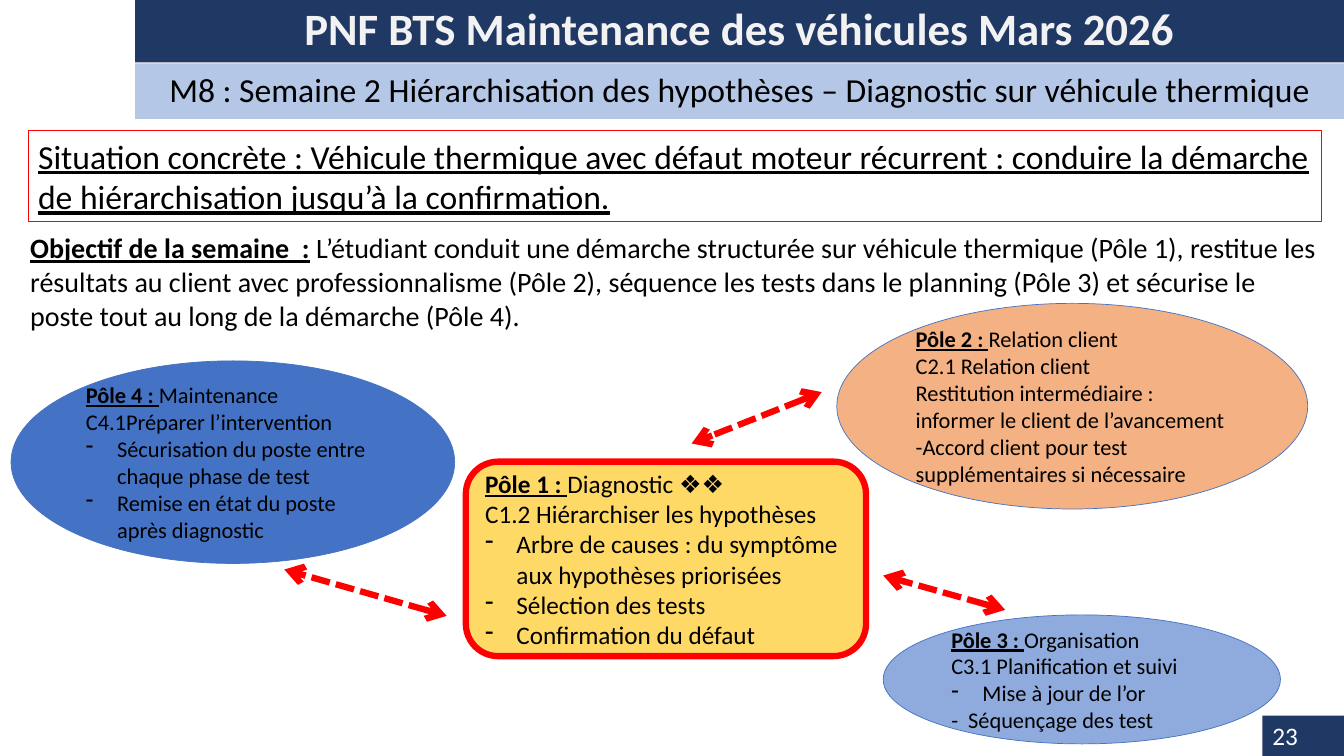
from dataclasses import dataclass

from lxml.etree import SubElement
from pptx import Presentation
from pptx.dml.color import RGBColor
from pptx.enum.dml import MSO_LINE
from pptx.enum.shapes import MSO_CONNECTOR, MSO_SHAPE
from pptx.enum.text import MSO_ANCHOR, MSO_AUTO_SIZE, PP_ALIGN
from pptx.oxml.ns import qn
from pptx.util import Inches, Pt


@dataclass(frozen=True)
class Theme:
    font: str = "Calibri"
    navy: str = "203864"
    pale_blue: str = "B4C7E7"
    soft_blue: str = "8FAADC"
    blue: str = "4472C4"
    orange: str = "F4B183"
    yellow: str = "FFD966"
    red: str = "FF0000"
    black: str = "000000"
    white: str = "FFFFFF"
    off_white: str = "F2F2F2"
    title: int = 32
    subtitle: int = 24
    body: int = 20
    label: int = 18
    small: int = 16
    heavy_line: float = 4.5
    fine_line: float = 0.75
    hairline: float = 0.5


THEME = Theme()


def color(code):
    return RGBColor.from_string(code)


def add_panel(page, kind, box, fill=None, line=None, width=0):
    panel = page.shapes.add_shape(kind, *map(Inches, box))
    panel.shadow.inherit = False
    if fill:
        panel.fill.solid()
        panel.fill.fore_color.rgb = color(fill)
    else:
        panel.fill.background()
    if line:
        panel.line.color.rgb = color(line)
        panel.line.width = Pt(width)
    else:
        panel.line.fill.background()
    return panel


def add_dash(para):
    properties = para._p.get_or_add_pPr()
    properties.set("marL", str(Inches(0.31)))
    properties.set("indent", str(-Inches(0.31)))
    SubElement(properties, qn("a:buFontTx"))
    SubElement(properties, qn("a:buChar"), char="-")


def style(para, size, ink=THEME.black, align=PP_ALIGN.LEFT):
    para.alignment = align
    para.font.name = THEME.font
    para.font.size = Pt(size)
    para.font.color.rgb = color(ink)


def add_heading(para, heading, text):
    span = para.add_run()
    span.text = heading
    span.font.bold = True
    span.font.underline = True
    para.add_run().text = text


def add_header(page, box, title, subtitle):
    left, top, width, height = box
    band = page.shapes.title
    band.left, band.top, band.width, band.height = map(Inches, (left, top, width, 0.62))
    band.fill.solid()
    band.fill.fore_color.rgb = color(THEME.navy)
    frame = band.text_frame
    frame.margin_left = frame.margin_right = frame.margin_top = frame.margin_bottom = 0
    frame.auto_size = MSO_AUTO_SIZE.NONE
    frame.vertical_anchor = MSO_ANCHOR.MIDDLE
    frame.text = title
    para = frame.paragraphs[0]
    para.line_spacing = 0.9
    style(para, THEME.title, THEME.off_white, PP_ALIGN.CENTER)
    para.font.bold = True

    strip = add_panel(page, MSO_SHAPE.RECTANGLE, (left, top + 0.63, width, height - 0.63), THEME.pale_blue)
    strip.text_frame.text = subtitle
    para = strip.text_frame.paragraphs[0]
    para.line_spacing = 0.9
    style(para, THEME.subtitle, align=PP_ALIGN.CENTER)


def add_situation(page, box, text):
    panel = add_panel(page, MSO_SHAPE.RECTANGLE, box, line=THEME.red, width=THEME.fine_line)
    panel.text_frame.text = text
    para = panel.text_frame.paragraphs[0]
    style(para, THEME.subtitle)
    para.font.underline = True


def add_objective(page, box, heading, text):
    frame = page.shapes.add_textbox(*map(Inches, box)).text_frame
    frame.word_wrap = True
    para = frame.paragraphs[0]
    style(para, THEME.body)
    add_heading(para, heading, text)


def add_pole(page, box, heading, subject, lines, fill, main=False):
    kind = MSO_SHAPE.ROUNDED_RECTANGLE if main else MSO_SHAPE.OVAL
    line, width = (THEME.red, THEME.heavy_line) if main else (THEME.blue, THEME.hairline)
    frame = add_panel(page, kind, box, fill, line, width).text_frame
    frame.word_wrap = True
    size = THEME.label if main else THEME.small
    add_heading(frame.paragraphs[0], heading, subject)
    style(frame.paragraphs[0], size)
    for text, dashed in lines:
        para = frame.add_paragraph()
        para.text = text
        if dashed:
            add_dash(para)
        style(para, size)


def add_double_arrow(page, start, end):
    arrow = page.shapes.add_connector(MSO_CONNECTOR.STRAIGHT, *map(Inches, start + end))
    arrow.line.color.rgb = color(THEME.red)
    arrow.line.width = Pt(THEME.heavy_line)
    arrow.line.dash_style = MSO_LINE.SQUARE_DOT
    outline = arrow.line._get_or_add_ln()
    for tip in ("a:headEnd", "a:tailEnd"):
        SubElement(outline, qn(tip), type="arrow")
    SubElement(arrow._element.spPr, qn("a:effectLst"))


def add_page_number(page, box, number):
    panel = add_panel(page, MSO_SHAPE.RECTANGLE, box, THEME.navy)
    panel.text_frame.text = number
    style(panel.text_frame.paragraphs[0], THEME.label, THEME.white)


def add_pole_map(page):
    add_pole(page, (4.62, 4.58, 3.97, 1.93), "Pôle 1 : ", "Diagnostic ❖❖", [
        ("C1.2 Hiérarchiser les hypothèses", False),
        ("Arbre de causes : du symptôme aux hypothèses priorisées", True),
        ("Sélection des tests", True),
        ("Confirmation du défaut", True),
    ], THEME.yellow, main=True)
    add_pole(page, (8.76, 6.1, 3.94, 1.28), "Pôle 3 : ", "Organisation", [
        ("C3.1 Planification et suivi", False),
        ("Mise à jour de l’or", True),
        ("-  Séquençage des test", False),
    ], THEME.soft_blue)
    add_pole(page, (8.3, 3.01, 4.67, 2.04), "Pôle 2 : ", "Relation client", [
        ("C2.1 Relation client", False),
        ("Restitution intermédiaire : informer le client de l’avancement", False),
        ("-Accord client pour test supplémentaires si nécessaire", False),
    ], THEME.orange)
    add_pole(page, (0.11, 3.58, 4.4, 2.01), "Pôle 4 : ", "Maintenance", [
        ("C4.1Préparer l’intervention", False),
        ("Sécurisation du poste entre chaque phase de test", True),
        ("Remise en état du poste après diagnostic", True),
    ], THEME.blue)
    for start, end in (
        ((4.43, 6.11), (2.82, 5.65)),
        ((8.15, 3.89), (6.86, 4.4)),
        ((9.97, 6.05), (8.76, 5.71)),
    ):
        add_double_arrow(page, start, end)


def main():
    deck = Presentation()
    deck.slide_width, deck.slide_height = Inches(13.33), Inches(7.5)
    page = deck.slides.add_slide(deck.slide_layouts.get_by_name("Title Only"))
    add_header(page, (1.34, 0, 11.99, 1.18), "PNF BTS Maintenance des véhicules Mars 2026",
               "M8 : Semaine 2 Hiérarchisation des hypothèses – Diagnostic sur véhicule thermique")
    add_page_number(page, (12.52, 7.1, 0.81, 0.4), "23")
    add_situation(page, (0.28, 1.29, 12.83, 0.91),
                  "Situation concrète : Véhicule thermique avec défaut moteur récurrent : "
                  "conduire la démarche de hiérarchisation jusqu’à la confirmation.")
    add_objective(page, (0.2, 2.24, 12.99, 1.11), "Objectif de la semaine  :",
                  " L’étudiant conduit une démarche structurée sur véhicule thermique (Pôle 1), "
                  "restitue les résultats au client avec professionnalisme (Pôle 2), séquence les "
                  "tests dans le planning (Pôle 3) et sécurise le poste tout au long de la démarche (Pôle 4).")
    add_pole_map(page)
    deck.save("out.pptx")


if __name__ == "__main__":
    main()
